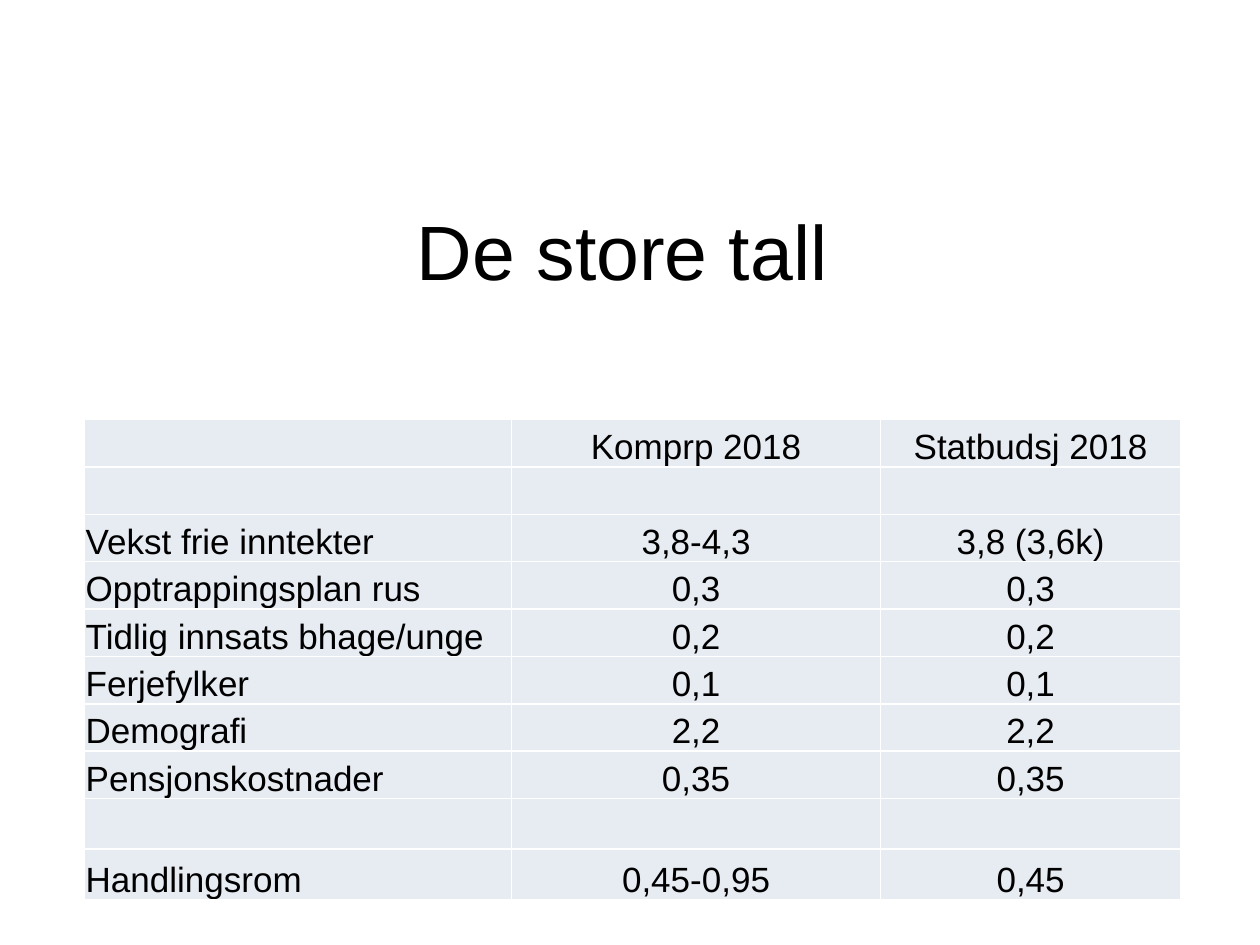
"""Build a slide with a title and a table of the main municipal budget figures."""
import pptx
import pptx.dml.color
import pptx.enum.text
import pptx.oxml.ns
import pptx.util
import lxml.etree

THEME = {
    "font": "Arial",
    "title_size": 44,
    "table_size": 20,
    "text": "000000",
    "cell": "E7EBF2",
    "border": "FFFFFF",
}
COLUMN_WIDTHS = [3.39, 2.93, 2.38]
TABLE_HEIGHT = 3.81
TALL_ROW = 0.4
TALL_COUNT = 2
FIGURES = [
    ("", "Komprp 2018", "Statbudsj 2018"),
    ("", "", ""),
    ("Vekst frie inntekter", "3,8-4,3", "3,8 (3,6k)"),
    ("Opptrappingsplan rus", "0,3", "0,3"),
    ("Tidlig innsats bhage/unge", "0,2", "0,2"),
    ("Ferjefylker", "0,1", "0,1"),
    ("Demografi", "2,2", "2,2"),
    ("Pensjonskostnader", "0,35", "0,35"),
    ("", "", ""),
    ("Handlingsrom", "0,45-0,95", "0,45"),
]
Inches = pptx.util.Inches
Align = pptx.enum.text.PP_ALIGN
Anchor = pptx.enum.text.MSO_ANCHOR


def write(para, text, size, align):
    para.alignment = align
    span = para.add_run()
    span.text = text
    span.font.name = THEME["font"]
    span.font.size = pptx.util.Pt(size)
    span.font.color.rgb = pptx.dml.color.RGBColor.from_string(THEME["text"])


def add_borders(cell):
    properties = cell._tc.get_or_add_tcPr()
    for side in ("lnL", "lnR", "lnT", "lnB"):
        line = lxml.etree.SubElement(properties, pptx.oxml.ns.qn(f"a:{side}"), w=str(pptx.util.Pt(1)))
        fill = lxml.etree.SubElement(line, pptx.oxml.ns.qn("a:solidFill"))
        lxml.etree.SubElement(fill, pptx.oxml.ns.qn("a:srgbClr"), val=THEME["border"])


deck = pptx.Presentation()
deck.slide_width, deck.slide_height = Inches(10), Inches(7.5)
page = deck.slides.add_slide(deck.slide_layouts.get_by_name("Title Only"))

title = page.shapes.title
title.left, title.top, title.width, title.height = map(Inches, (0.51, 1.47, 8.86, 1.02))
title.text_frame.vertical_anchor = Anchor.MIDDLE
write(title.text_frame.paragraphs[0], "De store tall", THEME["title_size"], Align.CENTER)

frame = page.shapes.add_table(
    len(FIGURES), len(COLUMN_WIDTHS),
    Inches(0.67), Inches(3.33), Inches(sum(COLUMN_WIDTHS)), Inches(TABLE_HEIGHT),
)
table = frame.table
table.first_row = table.horz_banding = False
for column, width in zip(table.columns, COLUMN_WIDTHS):
    column.width = Inches(width)

normal_count = len(FIGURES) - TALL_COUNT
normal_row = (TABLE_HEIGHT - TALL_COUNT * TALL_ROW) / normal_count
for row_index, figures in enumerate(FIGURES):
    table.rows[row_index].height = Inches(normal_row if row_index < normal_count else TALL_ROW)
    for column_index, text in enumerate(figures):
        cell = table.cell(row_index, column_index)
        cell.margin_left = cell.margin_right = cell.margin_top = Inches(0.01)
        cell.margin_bottom = 0
        cell.vertical_anchor = Anchor.BOTTOM
        add_borders(cell)
        cell.fill.solid()
        cell.fill.fore_color.rgb = pptx.dml.color.RGBColor.from_string(THEME["cell"])
        if text:
            align = Align.CENTER if column_index else Align.LEFT
            write(cell.text_frame.paragraphs[0], text, THEME["table_size"], align)

deck.save("out.pptx")
